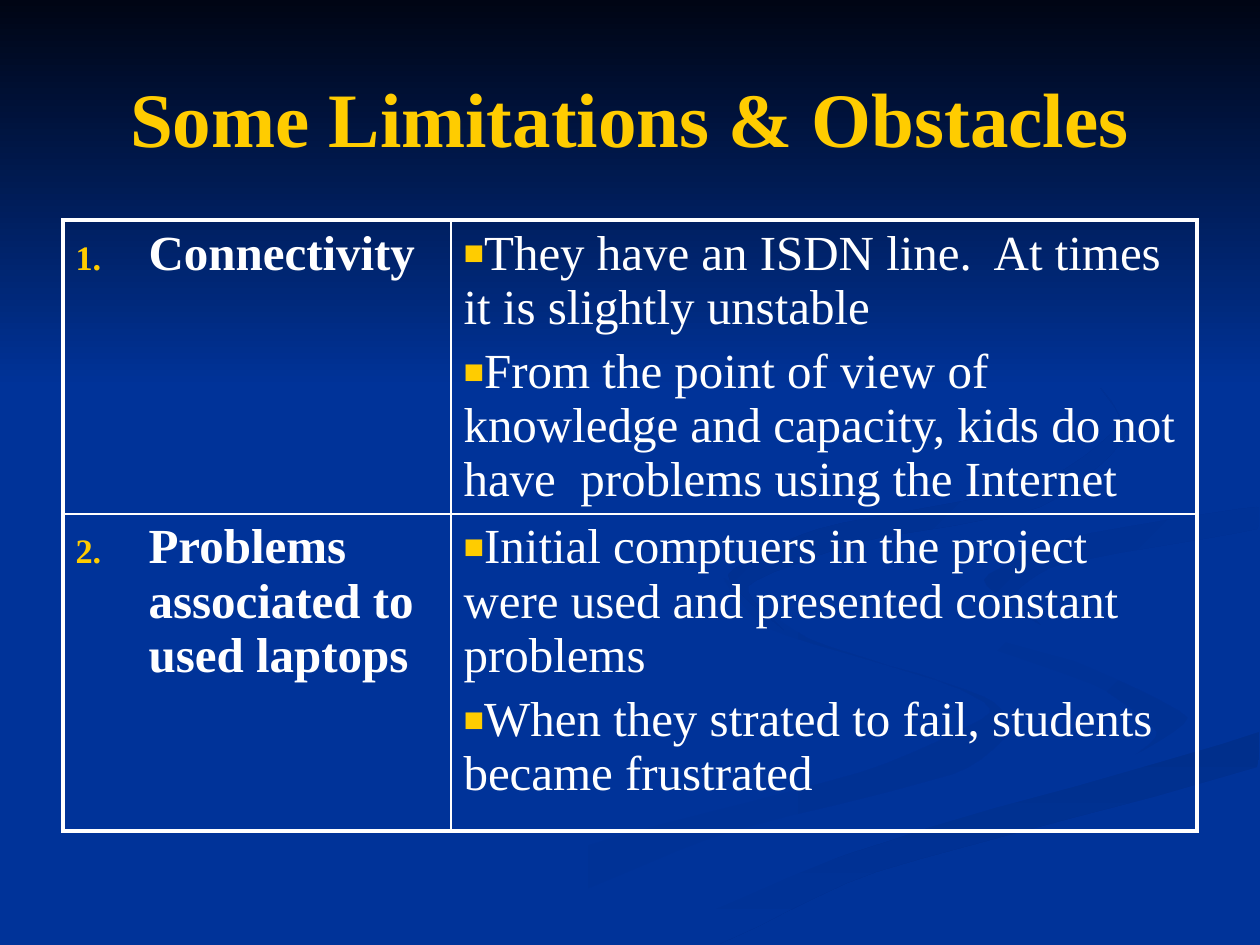
from pptx import Presentation
from pptx.dml.color import RGBColor
from pptx.enum.text import MSO_ANCHOR, PP_ALIGN
from pptx.oxml.ns import qn
from pptx.util import Pt
from lxml import etree

MID = MSO_ANCHOR.MIDDLE
MID_ROW = PP_ALIGN.CENTER
PX = 914400 / 126
WIDE, HIGH = 1260, 945

BLUE = RGBColor(0x00, 0x33, 0x99)
NIGHT = RGBColor(0x00, 0x05, 0x14)
DIM = RGBColor(0x00, 0x31, 0x93)
DEEP = RGBColor(0x00, 0x2F, 0x8C)
SHADE = RGBColor(0x00, 0x30, 0x91)
DUSK = RGBColor(0x00, 0x2F, 0x8E)
GOLD = RGBColor(0xFF, 0xCC, 0x00)
WHITE = RGBColor(0xFF, 0xFF, 0xFF)

FACE = "Times New Roman"
HEAD = {"name": FACE, "size": Pt(44), "bold": True}
TOPIC = {"name": FACE, "size": Pt(28), "bold": True}
BODY = {"name": FACE, "size": Pt(28), "bold": False}
THICK, THIN = 2.25, 1
STEPS = 6
PULL = 0.3

# Ribbons from back to front: first colour, last colour, angle, knots in px
RIBBONS = [
    (BLUE, DIM, 0, [
        (984, 697), (809, 639), (724, 578), (770, 629), (934, 679), (990, 713),
        (862, 772), (577, 849), (378, 944), (455, 944), (711, 838), (953, 774),
        (1008, 732)]),
    (BLUE, DIM, 45, [
        (1188, 718), (1071, 660), (939, 617), (912, 585), (940, 630),
        (1094, 685), (1157, 732), (1126, 762)]),
    (DEEP, BLUE, 90, [
        (634, 944), (719, 944), (876, 872), (1257, 767), (1257, 732),
        (1004, 804), (794, 873)]),
    (BLUE, BLUE, 0, [
        (914, 585), (977, 634), (1120, 674), (1188, 718), (1110, 766),
        (887, 825), (601, 944), (634, 944), (877, 843), (1259, 732),
        (1259, 678), (1048, 627), (984, 583), (1071, 538), (1259, 507),
        (1259, 488), (993, 532)]),
    (SHADE, BLUE, 45, [
        (984, 580), (1041, 625), (1014, 595), (1062, 564), (1257, 529),
        (1257, 507), (1070, 538)]),
    (DUSK, BLUE, 45, [
        (861, 542), (1040, 507), (1126, 433), (1062, 346), (960, 294),
        (1066, 352), (1120, 422), (1031, 486), (818, 529), (728, 575),
        (784, 630), (748, 586)]),
]
BAND = [(0, 0), (0, 388), (WIDE, 388), (WIDE, 0)]

ROWS = [
    ("Connectivity", [
        "They have an ISDN line.  At times it is slightly unstable",
        "From the point of view of  knowledge and capacity, kids do not "
        "have  problems using the Internet"]),
    ("Problems associated to used laptops", [
        "Initial comptuers in the project were used and presented constant problems",
        "When they strated to fail, students became frustrated"]),
]


def emu(px):
    return round(px * PX)


def node(base, tag, **attrs):
    return etree.SubElement(base, qn(tag), {k: str(v) for k, v in attrs.items()})


def blend(a, b, c, d, t):
    """Point at t on the smooth curve from b to c, with neighbours a and d."""
    turn = t * t * (3 - 2 * t)
    out = PULL * (c - a) * t * (1 - t) ** 2
    back = PULL * (d - b) * t * t * (1 - t)
    return b + (c - b) * turn + out - back


def smooth(knots):
    """Closed curve through the knots, kept inside the slide."""
    points = []
    for i in range(len(knots)):
        near = [knots[(i + k) % len(knots)] for k in (-1, 0, 1, 2)]
        for step in range(STEPS):
            x, y = (blend(*axis, step / STEPS) for axis in zip(*near))
            points.append((min(x, WIDE - 1), min(y, HIGH - 1)))
    return points


class Deck:
    def __init__(self):
        self.prs = Presentation()
        self.prs.slide_width, self.prs.slide_height = emu(WIDE), emu(HIGH)
        self.slide = self.prs.slides.add_slide(self.prs.slide_layouts[5])
        fill = self.slide.background.fill
        fill.solid()
        fill.fore_color.rgb = BLUE

    def style(self, font, look, color):
        for key, value in look.items():
            setattr(font, key, value)
        font.color.rgb = color

    def area(self, first, last, angle, points):
        pen = self.slide.shapes.build_freeform(*points[0], scale=PX)
        pen.add_line_segments(points[1:], close=True)
        shape = pen.convert_to_shape()
        shape.shadow.inherit = False
        shape.line.fill.background()
        if first == last:
            shape.fill.solid()
            shape.fill.fore_color.rgb = first
            return
        shape.fill.gradient()
        shape.fill.gradient_angle = -angle % 360
        for stop, color, spot in zip(shape.fill.gradient_stops, (first, last), (0, 1)):
            stop.color.rgb = color
            stop.position = spot

    def title(self, text, x, y, w, h):
        shape = self.slide.shapes.title
        shape.left, shape.top, shape.width, shape.height = map(emu, (x, y, w, h))
        frame = shape.text_frame
        frame.text = text
        frame.vertical_anchor = MID
        frame.paragraphs[0].alignment = MID_ROW
        self.style(frame.paragraphs[0].runs[0].font, HEAD, GOLD)
        # Bring the title in front of the ribbons
        self.slide.shapes._spTree.append(shape._element)

    def bullet(self, para, number):
        props = para._p.get_or_add_pPr()
        node(node(props, "a:buClr"), "a:srgbClr", val=GOLD)
        node(props, "a:buSzPct", val=70000)
        node(props, "a:buFont", typeface=FACE)
        if number:
            props.set("marL", str(emu(73)))
            props.set("indent", str(-emu(73)))
            node(props, "a:buAutoNum", type="arabicPeriod", startAt=number)
        else:
            node(props, "a:buChar", char="■")

    def cell(self, cell, lines, look, edges, number=None):
        frame = cell.text_frame
        for i, line in enumerate(lines):
            para = frame.add_paragraph() if i else frame.paragraphs[0]
            para.space_before = Pt(5.6 if i else 0)
            run = para.add_run()
            run.text = line
            self.style(run.font, look, WHITE)
            self.bullet(para, number)
        props = cell._tc.get_or_add_tcPr()
        for side, width in zip("LRTB", edges):
            line = node(props, f"a:ln{side}", w=Pt(width))
            node(node(line, "a:solidFill"), "a:srgbClr", val=WHITE)
        cell.fill.background()

    def table(self, rows, x, y, widths, heights):
        size = map(emu, (x, y, sum(widths), sum(heights)))
        table = self.slide.shapes.add_table(len(rows), len(widths), *size).table
        table.first_row = table.horz_banding = False
        for col, width in zip(table.columns, widths):
            col.width = emu(width)
        for row, height in zip(table.rows, heights):
            row.height = emu(height)
        end = len(rows) - 1
        for i, (topic, notes) in enumerate(rows):
            ends = (THIN if i else THICK, THICK if i == end else THIN)
            self.cell(table.cell(i, 0), [topic], TOPIC, (THICK, THIN, *ends), i + 1)
            self.cell(table.cell(i, 1), notes, BODY, (THIN, THICK, *ends))


def main():
    deck = Deck()
    # Backdrop
    for first, last, angle, knots in RIBBONS:
        deck.area(first, last, angle, smooth(knots))
    deck.area(NIGHT, BLUE, 90, BAND)
    # Content
    deck.title("Some Limitations & Obstacles", 63, 38, 1134, 157)
    deck.table(ROWS, 63, 220, (388, 746), (294, 317))
    deck.prs.save("out.pptx")


if __name__ == "__main__":
    main()
